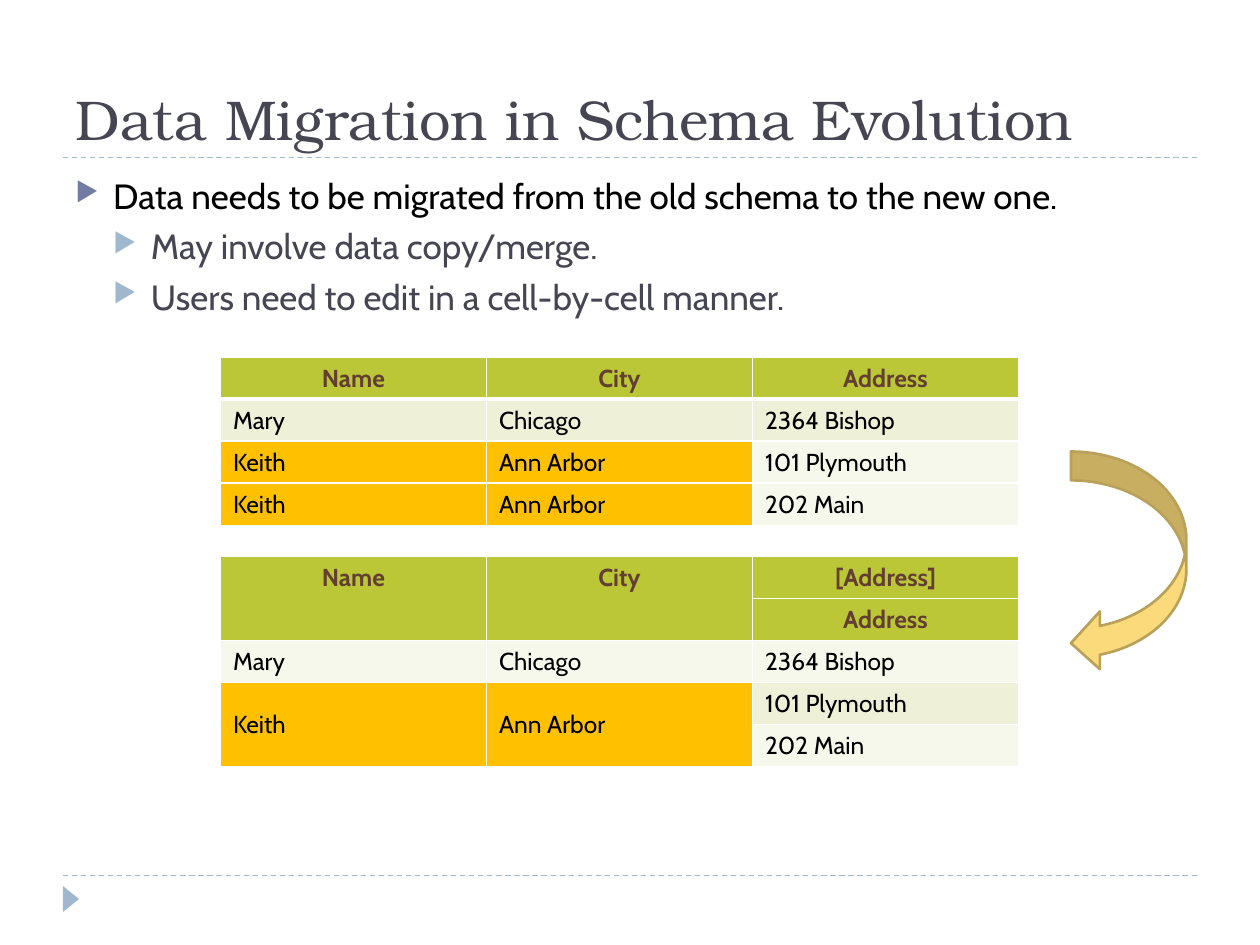
from dataclasses import dataclass

from lxml import etree
from pptx import Presentation
from pptx.dml.color import RGBColor
from pptx.enum.dml import MSO_LINE
from pptx.enum.shapes import MSO_CONNECTOR, MSO_SHAPE
from pptx.enum.text import MSO_ANCHOR, PP_ALIGN
from pptx.oxml.ns import qn
from pptx.util import Emu, Inches, Pt

STRAIGHT = MSO_CONNECTOR.STRAIGHT
TRIANGLE = MSO_SHAPE.ISOSCELES_TRIANGLE
CURVED_ARROW = MSO_SHAPE.CURVED_LEFT_ARROW
DASH = MSO_LINE.DASH
CENTER, LEFT = PP_ALIGN.CENTER, PP_ALIGN.LEFT
TOP, MIDDLE, BOTTOM = MSO_ANCHOR.TOP, MSO_ANCHOR.MIDDLE, MSO_ANCHOR.BOTTOM

COLUMNS, ROWS = 120, 90
SLIDE_W, SLIDE_H = Inches(10), Inches(7.5)


@dataclass(frozen=True)
class Theme:
    serif: str = "TeX Gyre Bonum"
    sans: str = "Cabin"
    ink: str = "000000"
    slate: str = "464653"
    indigo: str = "727CA3"
    sky: str = "9FB8CD"
    white: str = "FFFFFF"
    header: str = "BBC737"
    header_text: str = "633F32"
    band: str = "EEF1D7"
    pale: str = "F7F8EC"
    changed: str = "FFC000"
    arrow: str = "FADA7A"
    arrow_edge: str = "B9A15A"
    title_pt: int = 32
    body_pt: int = 20
    cell_pt: int = 14


@dataclass(frozen=True)
class Box:
    x: float
    y: float
    w: float
    h: float

    def emu(self):
        return across(self.x), down(self.y), across(self.w), down(self.h)


THEME = Theme()


def across(columns):
    return Emu(round(SLIDE_W * columns / COLUMNS))


def down(rows):
    return Emu(round(SLIDE_H * rows / ROWS))


def rgb(value):
    return RGBColor.from_string(value)


def apply(target, **values):
    for name, value in values.items():
        setattr(target, name, value)


def child(parent, tag, **attributes):
    return etree.SubElement(parent, qn(tag), attributes)


def add_run(p, text, color, **font):
    r = p.add_run()
    r.text = text
    apply(r.font, **font)
    r.font.color.rgb = rgb(color)


def add_shape(s, kind, box, fill):
    sp = s.shapes.add_shape(kind, *box.emu())
    sp.shadow.inherit = False
    sp.fill.solid()
    sp.fill.fore_color.rgb = rgb(fill)
    return sp


def add_rule(s, box):
    x, y, w, _ = box.emu()
    line = s.shapes.add_connector(STRAIGHT, x, y, x + w, y)
    apply(line.line, width=Pt(0.75), dash_style=DASH)
    line.line.color.rgb = rgb(THEME.sky)
    child(line._element.spPr, "a:effectLst")


def add_footer(s, box):
    add_rule(s, box)
    marker = add_shape(s, TRIANGLE, Box(box.x - 0.5, box.y + 1.45, 2.5, 1.55), THEME.sky)
    marker.rotation = 90
    marker.line.fill.background()


def add_title(s, box, text):
    add_rule(s, Box(box.x, box.y + box.h, box.w, 0))
    tf = s.shapes.add_textbox(*box.emu()).text_frame
    apply(tf, word_wrap=True, vertical_anchor=BOTTOM)
    add_run(tf.paragraphs[0], text, THEME.slate, name=THEME.serif, size=Pt(THEME.title_pt))


def add_bullet(p, level, color):
    pPr = p._p.get_or_add_pPr()
    indent = across(3.6)
    pPr.set("marL", str(indent * (level + 1)))
    pPr.set("indent", str(-indent))
    child(child(pPr, "a:buClr"), "a:srgbClr", val=color)
    child(pPr, "a:buSzPct", val="76000")
    child(pPr, "a:buChar", char="▶")


def add_body(s, box, points):
    styles = [(THEME.indigo, THEME.ink), (THEME.sky, THEME.slate)]
    tf = s.shapes.add_textbox(*box.emu()).text_frame
    tf.word_wrap = True
    for i, (level, text) in enumerate(points):
        p = tf.add_paragraph() if i else tf.paragraphs[0]
        bullet_color, color = styles[level]
        add_bullet(p, level, bullet_color)
        apply(p, level=level, space_before=Pt(5 if i else 0))
        add_run(p, text, color, name=THEME.sans, size=Pt(THEME.body_pt))


def add_borders(cell, **widths):
    tcPr = cell._tc.get_or_add_tcPr()
    for side in "LRTB":
        ln = child(tcPr, f"a:ln{side}", w=str(Pt(widths.get(side, 1))))
        child(child(ln, "a:solidFill"), "a:srgbClr", val=THEME.white)


def add_records(s, box, rows, fills, heads=1, merges=(), rule=1):
    width = len(rows[0])
    table = s.shapes.add_table(len(rows), width, *box.emu()).table
    table.horz_banding = False
    for column in table.columns:
        column.width = across(box.w / width)
    for row in table.rows:
        row.height = down(box.h / len(rows))
    for i, (texts, fill) in enumerate(zip(rows, fills)):
        head = i < heads
        color = THEME.header_text if head else THEME.ink
        edges = {"B": rule} if i == heads - 1 else {"T": rule} if i == heads else {}
        for j, text in enumerate(texts):
            cell = table.cell(i, j)
            add_borders(cell, **edges)
            changed = fill == THEME.changed
            cell.fill.solid()
            cell.fill.fore_color.rgb = rgb(fill[j] if isinstance(fill, tuple) else fill)
            p = cell.text_frame.paragraphs[0]
            p.alignment = CENTER if head else LEFT
            if text:
                add_run(p, text, color, name=THEME.sans, size=Pt(THEME.cell_pt), bold=head)
    for first, last, column, anchor in merges:
        origin = table.cell(first, column)
        origin.merge(table.cell(last, column))
        origin.vertical_anchor = anchor


def add_flow(s, box):
    arrow = add_shape(s, CURVED_ARROW, box, THEME.arrow)
    arrow.line.width = Pt(1.5)
    arrow.line.color.rgb = rgb(THEME.arrow_edge)


def main():
    prs = Presentation()
    apply(prs, slide_width=SLIDE_W, slide_height=SLIDE_H)
    s = prs.slides.add_slide(prs.slide_layouts[6])
    keith_pale = (THEME.changed, THEME.changed, THEME.pale)
    keith_band = (THEME.changed, THEME.changed, THEME.band)

    add_footer(s, Box(6, 83.4, 108, 0))
    add_title(s, Box(6, 2, 108, 13), "Data Migration in Schema Evolution")
    add_body(s, Box(6, 16, 108, 17), [
        (0, "Data needs to be migrated from the old schema to the new one."),
        (1, "May involve data copy/merge."),
        (1, "Users need to edit in a cell-by-cell manner."),
    ])
    add_records(s, Box(21, 34, 76, 16), [
        ("Name", "City", "Address"),
        ("Mary", "Chicago", "2364 Bishop"),
        ("Keith", "Ann Arbor", "101 Plymouth"),
        ("Keith", "Ann Arbor", "202 Main"),
    ], [THEME.header, THEME.band, keith_pale, keith_pale], rule=3)
    add_records(s, Box(21, 53, 76, 20), [
        ("Name", "City", "[Address]"),
        ("", "", "Address"),
        ("Mary", "Chicago", "2364 Bishop"),
        ("Keith", "Ann Arbor", "101 Plymouth"),
        ("", "", "202 Main"),
    ], [THEME.header, THEME.header, THEME.pale, keith_band, keith_pale], heads=2,
        merges=[(0, 1, 0, TOP), (0, 1, 1, TOP), (3, 4, 0, MIDDLE), (3, 4, 1, MIDDLE)])
    add_flow(s, Box(102, 43, 11, 21))
    prs.save("out.pptx")


if __name__ == "__main__":
    main()
